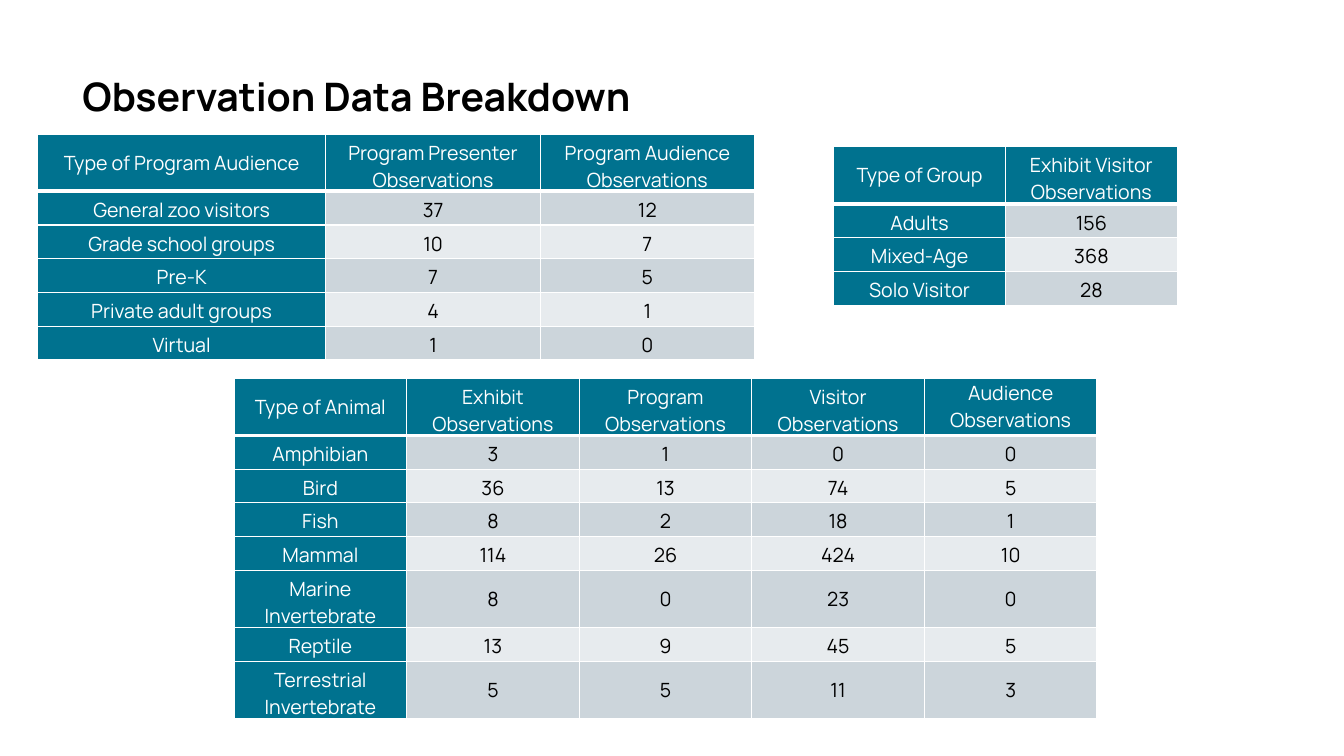
from dataclasses import dataclass

from lxml import etree
from pptx import Presentation
from pptx import util as u
from pptx.dml.color import RGBColor
from pptx.enum import text
from pptx.oxml import ns


@dataclass(frozen=True)
class Theme:
    font: str = "Manrope"
    teal: str = "00728F"
    bands: tuple = ("CCD5DB", "E7EBEE")
    white: str = "FFFFFF"
    black: str = "000000"
    title_size: int = 28
    table_size: int = 14


theme = Theme()
SINGLE, DOUBLE = 0.85, 1.44  # heights of one-line and two-line rows, cm


def add_run(p, words, size, color, bold=False):
    r = p.add_run()
    r.text = words
    r.font.name, r.font.size, r.font.bold = theme.font, u.Pt(size), bold
    r.font.color.rgb = RGBColor.from_string(color)


def add_borders(cell, bottom):
    tc_pr = cell._tc.get_or_add_tcPr()
    for side, width in (("L", 1), ("R", 1), ("T", 1), ("B", bottom)):
        ln = etree.SubElement(tc_pr, ns.qn(f"a:ln{side}"), w=str(u.Pt(width)))
        fill = etree.SubElement(ln, ns.qn("a:solidFill"))
        etree.SubElement(fill, ns.qn("a:srgbClr"), val=theme.white)


prs = Presentation()
prs.slide_width, prs.slide_height = u.Cm(33.87), u.Cm(19.05)
s = prs.slides.add_slide(prs.slide_layouts[6])

# Table content: position, column widths, side margin of body cells, rows
animals = dict(
    left=5.9, top=9.53, widths=[4.35] * 5, margin=0.25,
    rows=[
        ["Type of Animal", "Exhibit\nObservations", "Program Observations",
         "Visitor\nObservations", "Audience Observations"],
        ["Amphibian", 3, 1, 0, 0],
        ["Bird", 36, 13, 74, 5],
        ["Fish", 8, 2, 18, 1],
        ["Mammal", 114, 26, 424, 10],
        ["Marine Invertebrate", 8, 0, 23, 0],
        ["Reptile", 13, 9, 45, 5],
        ["Terrestrial Invertebrate", 5, 5, 11, 3],
    ])
audiences = dict(
    left=0.95, top=3.38, widths=[7.26, 5.41, 5.39], margin=0.13,
    rows=[
        ["Type of Program Audience", "Program Presenter Observations",
         "Program Audience Observations"],
        ["General zoo visitors", 37, 12],
        ["Grade school groups", 10, 7],
        ["Pre-K", 7, 5],
        ["Private adult groups", 4, 1],
        ["Virtual", 1, 0],
    ])
groups = dict(
    left=21.01, top=3.7, widths=[4.33] * 2, margin=0.13,
    rows=[
        ["Type of Group", "Exhibit Visitor Observations"],
        ["Adults", 156],
        ["Mixed-Age", 368],
        ["Solo Visitor", 28],
    ])

# Title
sp = s.shapes.add_textbox(u.Cm(1.83), u.Cm(1.7), u.Cm(15.62), u.Cm(1.45))
tf = sp.text_frame
tf.word_wrap = False
tf.auto_size = text.MSO_AUTO_SIZE.SHAPE_TO_FIT_TEXT
add_run(tf.paragraphs[0], "Observation Data Breakdown",
        theme.title_size, theme.black, bold=True)

# Tables
for data in (animals, audiences, groups):
    rows, widths = data["rows"], data["widths"]
    heights = [DOUBLE if i == 0 or "Invertebrate" in row[0] else SINGLE
               for i, row in enumerate(rows)]
    table = s.shapes.add_table(
        len(rows), len(widths), u.Cm(data["left"]), u.Cm(data["top"]),
        u.Cm(sum(widths)), u.Cm(sum(heights))).table
    for column, width in zip(table.columns, widths):
        column.width = u.Cm(width)

    for i, (row, height) in enumerate(zip(rows, heights)):
        table.rows[i].height = u.Cm(height)
        for j, value in enumerate(row):
            cell = table.cell(i, j)
            is_label = i == 0 or j == 0
            add_borders(cell, bottom=3 if i == 0 else 1)
            cell.fill.solid()
            cell.fill.fore_color.rgb = RGBColor.from_string(
                theme.teal if is_label else theme.bands[(i - 1) % 2])
            cell.vertical_anchor = text.MSO_ANCHOR.MIDDLE
            if i > 0:
                cell.margin_left = cell.margin_right = u.Cm(data["margin"])
            if value == "Audience Observations":
                cell.margin_top = cell.margin_bottom = u.Cm(0)

            tf = cell.text_frame
            for k, line in enumerate(str(value).split("\n")):
                p = tf.add_paragraph() if k else tf.paragraphs[0]
                p.alignment = text.PP_ALIGN.CENTER
                add_run(p, line, theme.table_size,
                        theme.white if is_label else theme.black)

prs.save("out.pptx")
